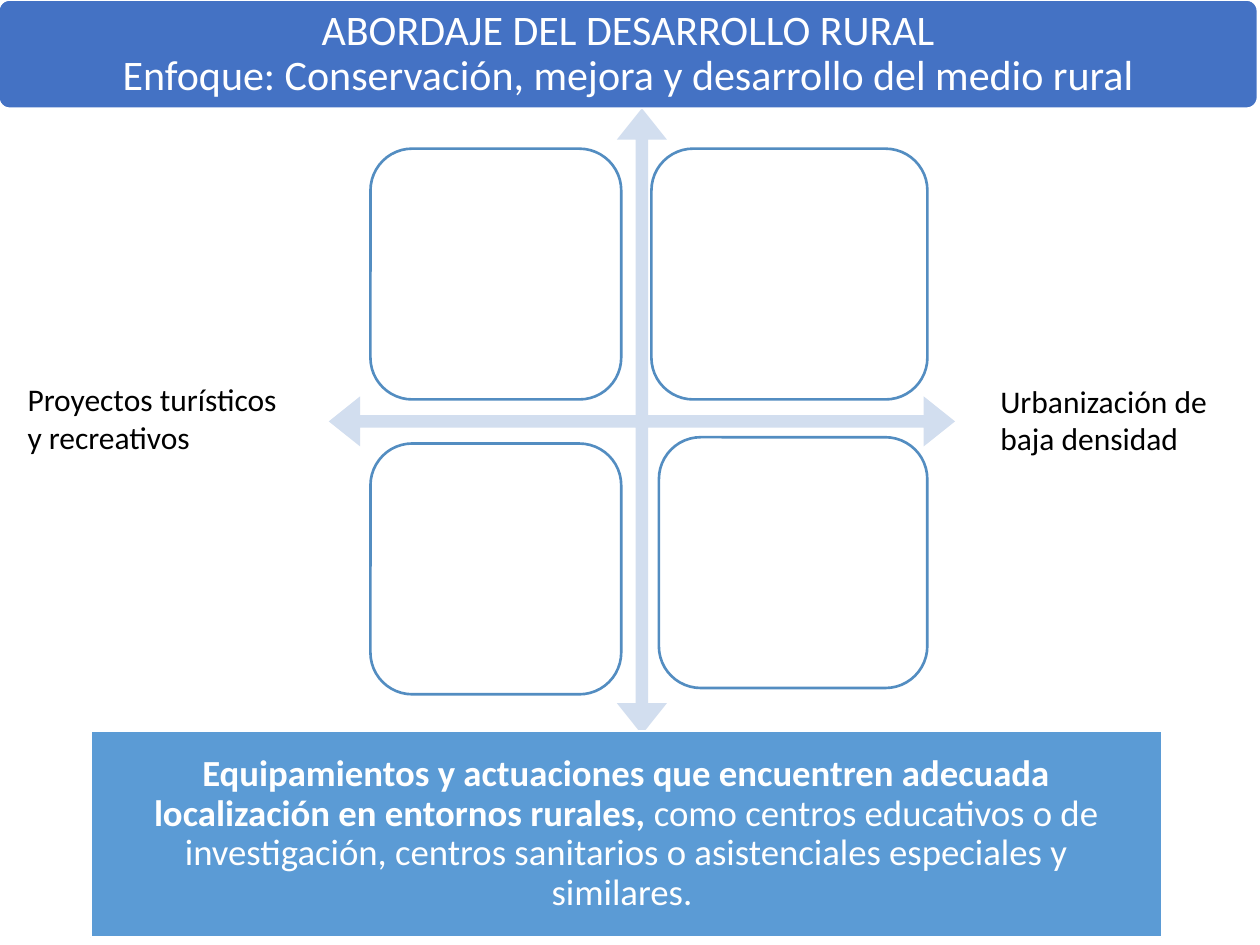
"""Build a slide on rural development with four empty quadrants around crossed arrows."""
from pptx import Presentation
from pptx.dml.color import RGBColor
from pptx.enum.shapes import MSO_SHAPE as Shape
from pptx.enum.text import MSO_ANCHOR as Anchor, PP_ALIGN as Align
from pptx.util import Inches, Pt

WHITE = RGBColor(0xFF, 0xFF, 0xFF)
BLACK = RGBColor(0, 0, 0)
PALE_BLUE = RGBColor(0xD2, 0xDE, 0xEF)
OUTLINE_BLUE = RGBColor(0x53, 0x8D, 0xC1)
SKY_BLUE = RGBColor(0x5B, 0x9B, 0xD5)
ROYAL_BLUE = RGBColor(0x44, 0x72, 0xC4)
COLUMNS, ROWS = 100, 75

deck = Presentation()
deck.slide_width, deck.slide_height = Inches(10), Inches(7.5)
column, row = deck.slide_width / COLUMNS, deck.slide_height / ROWS
slide = deck.slides.add_slide(deck.slide_layouts[6])


def cells(left, top, width, height):
    return [round(n * unit) for n, unit in zip((left, top, width, height), (column, row) * 2)]


def add_block(kind, area, fill, outline=None, weight=1, adjustments=()):
    block = slide.shapes.add_shape(kind, *cells(*area))
    block.shadow.inherit = False
    block.fill.solid()
    block.fill.fore_color.rgb = fill
    if outline is None:
        block.line.fill.background()
    else:
        block.line.color.rgb = outline
        block.line.width = Pt(weight)
    for index, value in enumerate(adjustments):
        block.adjustments[index] = value
    return block


add_block(Shape.QUAD_ARROW, (26.1, 8.6, 49.7, 49.7), PALE_BLUE, adjustments=(0.02, 0.04, 0.05))

for left, top, width in ((29.4, 11.8, 19.9), (51.7, 11.8, 21.9), (29.4, 35.2, 19.9), (52.3, 34.7, 21.3)):
    add_block(Shape.ROUNDED_RECTANGLE, (left, top, width, 19.9), WHITE, OUTLINE_BLUE, 1.5)

facilities = add_block(Shape.RECTANGLE, (7.2, 58, 85, 16.4), SKY_BLUE, WHITE)
title = add_block(Shape.ROUNDED_RECTANGLE, (-0.1, 0, 99.9, 8.6), ROYAL_BLUE, WHITE, adjustments=(0.1,))

banners = (
    (facilities, 21, 1.6, [[
        ("Equipamientos y actuaciones que encuentren adecuada localización en entornos rurales, ", True),
        ("como centros educativos o de investigación, centros sanitarios o asistenciales especiales y similares. ", False),
    ]]),
    (title, 24, 1, [
        [("ABORDAJE DEL DESARROLLO RURAL", False)],
        [("Enfoque: Conservación, mejora y desarrollo del medio rural", False)],
    ]),
)
for banner, size, margin, paragraphs in banners:
    frame = banner.text_frame
    frame.word_wrap = True
    frame.vertical_anchor = Anchor.MIDDLE
    frame.margin_left = frame.margin_right = round(margin * column)
    frame.margin_top = frame.margin_bottom = round(margin * row)
    for index, phrases in enumerate(paragraphs):
        paragraph = frame.add_paragraph() if index else frame.paragraphs[0]
        paragraph.alignment = Align.CENTER
        paragraph.line_spacing = 0.9
        paragraph.font.name = "Calibri"
        paragraph.font.size = Pt(size)
        paragraph.font.color.rgb = WHITE
        for words, bold in phrases:
            phrase = paragraph.add_run()
            phrase.text = words
            phrase.font.bold = bold

side_labels = (
    ("Urbanización de baja densidad", (78.4, 29.8, 20.5, 7.1)),
    ("Proyectos turísticos y recreativos", (1.2, 29.7, 22.9, 7.1)),
)
for words, area in side_labels:
    frame = slide.shapes.add_textbox(*cells(*area)).text_frame
    frame.word_wrap = True
    frame.text = words
    label = frame.paragraphs[0]
    label.font.name = "Calibri"
    label.font.size = Pt(18)
    label.font.color.rgb = BLACK

deck.save("out.pptx")
